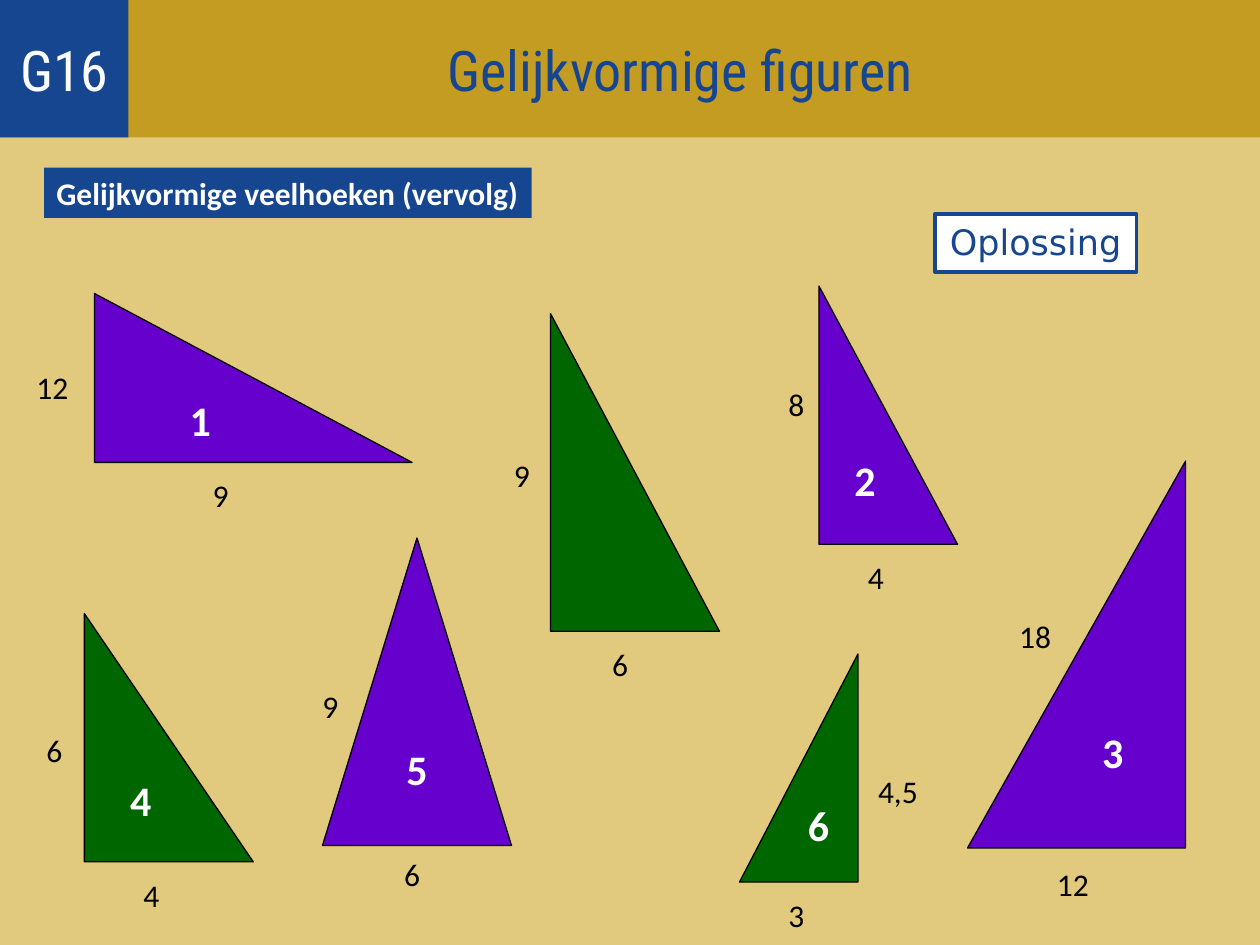
from dataclasses import dataclass
from typing import Optional

from pptx import Presentation
from pptx.dml.color import RGBColor
from pptx.enum.shapes import MSO_SHAPE
from pptx.enum.text import MSO_ANCHOR, MSO_AUTO_SIZE, PP_ALIGN
from pptx.util import Inches, Pt

RECTANGLE = MSO_SHAPE.RECTANGLE
RIGHT_ANGLED = MSO_SHAPE.RIGHT_TRIANGLE
ISOSCELES = MSO_SHAPE.ISOSCELES_TRIANGLE
LEFT, CENTER = PP_ALIGN.LEFT, PP_ALIGN.CENTER
TOP, MIDDLE = MSO_ANCHOR.TOP, MSO_ANCHOR.MIDDLE

# The slide is a grid of 100 columns by 75 rows
COLUMNS, ROWS = 100, 75
CELL = Inches(0.1)


@dataclass(frozen=True)
class Theme:
    sand: str = "E1CA7D"
    gold: str = "C59C22"
    blue: str = "174691"
    green: str = "006600"
    purple: str = "6600CC"
    black: str = "000000"
    white: str = "FFFFFF"
    near_white: str = "FCFDFE"
    body_font: str = "Calibri"
    title_font: str = "Roboto Condensed"
    button_font: str = "DejaVu Sans"
    title_size: int = 32
    number_size: int = 24
    button_size: int = 20
    body_size: int = 18


THEME = Theme()


@dataclass(frozen=True)
class Area:
    column: float
    row: float
    columns: float
    rows: float

    def lengths(self) -> list[int]:
        return [round(cells * CELL)
                for cells in (self.column, self.row, self.columns, self.rows)]


@dataclass(frozen=True)
class TextStyle:
    size: int
    color: str
    font: str = THEME.body_font
    bold: bool = False
    align: PP_ALIGN = CENTER
    anchor: MSO_ANCHOR = MIDDLE
    wrap: bool = False
    grow: bool = False


@dataclass(frozen=True)
class SideLabel:
    text: str
    column: float
    row: float


@dataclass(frozen=True)
class Triangle:
    number: str
    area: Area
    color: str
    labels: tuple[SideLabel, SideLabel]
    outline: MSO_SHAPE = RIGHT_ANGLED
    mirrored: bool = False


SIDE = TextStyle(THEME.body_size, THEME.black, align=LEFT, anchor=TOP, grow=True)
NUMBER = TextStyle(THEME.number_size, THEME.white, bold=True)
HEADING = TextStyle(THEME.body_size, THEME.white, bold=True, align=LEFT,
                    anchor=TOP, grow=True)
BUTTON = TextStyle(THEME.button_size, THEME.blue, THEME.button_font,
                   anchor=TOP, wrap=True, grow=True)
TITLE = TextStyle(THEME.title_size, THEME.blue, THEME.title_font, wrap=True)
CODE = TextStyle(THEME.title_size, THEME.near_white, THEME.title_font, wrap=True)

LABEL_ROWS = 4
LABEL_COLUMNS = {1: 3.3, 2: 4.5, 3: 5.2}  # by number of characters

TRIANGLES = [
    Triangle("", Area(43.7, 24.9, 13.4, 25.2), THEME.green,
             (SideLabel("9", 39.8, 35.7), SideLabel("6", 47.6, 50.7))),
    Triangle("5", Area(25.6, 42.7, 15, 24.4), THEME.purple,
             (SideLabel("9", 24.6, 54), SideLabel("6", 31.1, 67.4)),
             outline=ISOSCELES),
    Triangle("6", Area(58.7, 51.9, 9.4, 18.1), THEME.green,
             (SideLabel("4,5", 68.7, 60.8), SideLabel("3", 61.6, 70.6)),
             mirrored=True),
    Triangle("3", Area(76.8, 36.6, 17.3, 30.7), THEME.purple,
             (SideLabel("18", 79.9, 48.5), SideLabel("12", 82.9, 68.2)),
             mirrored=True),
    Triangle("1", Area(7.5, 23.3, 25.2, 13.4), THEME.purple,
             (SideLabel("12", 1.9, 28.7), SideLabel("9", 15.9, 37.3))),
    Triangle("4", Area(6.7, 48.7, 13.4, 19.7), THEME.green,
             (SideLabel("6", 2.7, 57.5), SideLabel("4", 10.4, 69))),
    Triangle("2", Area(65, 22.7, 11, 20.5), THEME.purple,
             (SideLabel("8", 61.6, 30.1), SideLabel("4", 67.9, 43.8))),
]


def write(box, text: str, style: TextStyle) -> None:
    frame = box.text_frame
    frame_format = {
        "word_wrap": style.wrap,
        "vertical_anchor": style.anchor,
        "auto_size": (MSO_AUTO_SIZE.SHAPE_TO_FIT_TEXT if style.grow
                      else MSO_AUTO_SIZE.NONE),
    }
    for name, value in frame_format.items():
        setattr(frame, name, value)
    para = frame.paragraphs[0]
    para.alignment = style.align
    span = para.add_run()
    span.text = text
    font_format = {"name": style.font, "size": Pt(style.size), "bold": style.bold}
    for name, value in font_format.items():
        setattr(span.font, name, value)
    span.font.color.rgb = RGBColor.from_string(style.color)


def draw_shape(shapes, outline: MSO_SHAPE, area: Area, fill: str,
               line: Optional[str] = None, line_width: float = 0.75):
    shape = shapes.add_shape(outline, *area.lengths())
    shape.shadow.inherit = False
    shape.fill.solid()
    shape.fill.fore_color.rgb = RGBColor.from_string(fill)
    if line:
        shape.line.color.rgb = RGBColor.from_string(line)
        shape.line.width = Pt(line_width)
    else:
        shape.line.fill.background()
    return shape


def draw_triangle(page, triangle: Triangle) -> None:
    shapes = page.shapes.add_group_shape().shapes
    shape = draw_shape(shapes, triangle.outline, triangle.area,
                       triangle.color, THEME.black)
    if triangle.mirrored:
        shape._element.spPr.xfrm.set("flipH", "1")
    if triangle.number:
        write(shape, triangle.number, NUMBER)
    for label in triangle.labels:
        area = Area(label.column, label.row,
                    LABEL_COLUMNS[len(label.text)], LABEL_ROWS)
        write(shapes.add_textbox(*area.lengths()), label.text, SIDE)


def draw_header(page) -> None:
    shapes = page.shapes.add_group_shape().shapes
    band = draw_shape(shapes, RECTANGLE, Area(0, 0, COLUMNS, 10.9), THEME.gold)
    write(band, "Gelijkvormige figuren", TITLE)
    band.text_frame.margin_left = 9 * CELL  # centres the title beside the code
    code = draw_shape(shapes, RECTANGLE, Area(0, 0, 10.2, 10.9), THEME.blue)
    write(code, "G16", CODE)


def main() -> None:
    deck = Presentation()
    deck.slide_width, deck.slide_height = COLUMNS * CELL, ROWS * CELL
    page = deck.slides.add_slide(deck.slide_layouts[6])
    page.background.fill.solid()
    page.background.fill.fore_color.rgb = RGBColor.from_string(THEME.sand)

    # Triangles with the lengths of their sides
    for triangle in TRIANGLES:
        draw_triangle(page, triangle)

    # Solution button and section heading
    button = draw_shape(page.shapes, RECTANGLE, Area(74.2, 17, 16, 4.6),
                        THEME.white, THEME.blue, 2)
    write(button, "Oplossing", BUTTON)
    heading = draw_shape(page.shapes, RECTANGLE, Area(3.5, 13.3, 38.7, 4), THEME.blue)
    write(heading, "Gelijkvormige veelhoeken (vervolg)", HEADING)

    draw_header(page)
    deck.save("out.pptx")


if __name__ == "__main__":
    main()
